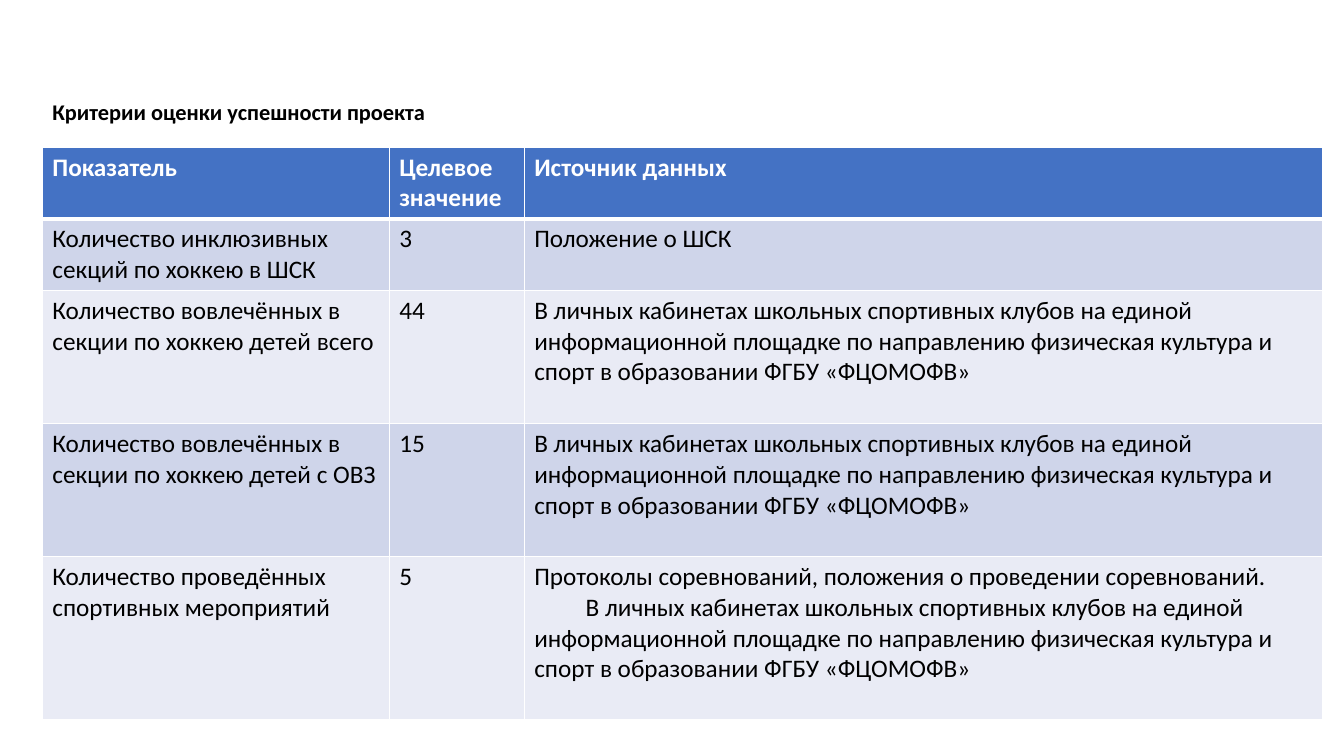
from dataclasses import dataclass

from lxml.etree import SubElement
from pptx import Presentation
from pptx.dml.color import RGBColor
from pptx.enum.text import MSO_ANCHOR, PP_ALIGN
from pptx.oxml import parse_xml
from pptx.oxml.ns import nsdecls
from pptx.slide import Slide
from pptx.table import _Cell
from pptx.text.text import _Paragraph
from pptx.util import Inches, Pt

FONT = "Calibri"
COLORS = {
    "text": "000000",
    "header_text": "FFFFFF",
    "header": "4472C4",
    "odd_row": "CFD5EA",
    "even_row": "E9EBF5",
    "border": "FFFFFF",
}
COLUMN_WIDTHS = (3.44, 1.34, 7.92)
SECOND_PARAGRAPH_INDENT = 0.51
CLUB_ACCOUNTS = (
    "В личных кабинетах школьных спортивных клубов на единой информационной "
    "площадке по направлению физическая культура и спорт в образовании "
    "ФГБУ «ФЦОМОФВ»"
)


@dataclass(frozen=True)
class Criterion:
    indicator: str
    target: str
    sources: tuple[str, ...]
    height: float


HEADING = Criterion("Показатель", "Целевое значение", ("Источник данных",), 0.7)
CRITERIA = (
    Criterion("Количество инклюзивных секций по хоккею в ШСК", "3",
              ("Положение о ШСК",), 0.71),
    Criterion("Количество вовлечённых в секции по хоккею детей всего", "44",
              (CLUB_ACCOUNTS,), 1.32),
    Criterion("Количество вовлечённых в секции по хоккею детей с ОВЗ", "15",
              (CLUB_ACCOUNTS,), 1.32),
    Criterion("Количество проведённых спортивных мероприятий", "5",
              ("Протоколы соревнований, положения о проведении соревнований.",
               CLUB_ACCOUNTS), 1.62),
)


def add_text(paragraph: _Paragraph, text: str, size: int, color: str, bold: bool) -> None:
    run = paragraph.add_run()
    run.text = text
    run.font.name = FONT
    run.font.size = Pt(size)
    run.font.bold = bold
    run.font.color.rgb = RGBColor.from_string(COLORS[color])


def set_borders(cell: _Cell, top: int, bottom: int) -> None:
    """Draw the four cell edges; widths are in points."""
    properties = cell._tc.get_or_add_tcPr()
    widths = {"lnL": 1, "lnR": 1, "lnT": top, "lnB": bottom}
    for position, (edge, width) in enumerate(widths.items()):
        line = parse_xml(f'<a:{edge} {nsdecls("a")} w="{Pt(width)}"><a:solidFill/></a:{edge}>')
        SubElement(line[0], f"{{{line.nsmap['a']}}}srgbClr", val=COLORS["border"])
        properties.insert(position, line)


def fill_cell(cell: _Cell, texts: tuple[str, ...], row: int) -> None:
    is_header = row == 0
    fill = "header" if is_header else "odd_row" if row % 2 else "even_row"
    cell.fill.solid()
    cell.fill.fore_color.rgb = RGBColor.from_string(COLORS[fill])
    set_borders(cell, top=3 if row == 1 else 1, bottom=3 if is_header else 1)
    for number, text in enumerate(texts):
        frame = cell.text_frame
        paragraph = frame.add_paragraph() if number else frame.paragraphs[0]
        if number:
            paragraph._p.get_or_add_pPr().set("indent", str(Inches(SECOND_PARAGRAPH_INDENT)))
        add_text(paragraph, text, 18, "header_text" if is_header else "text", is_header)


def add_title(slide: Slide, text: str) -> None:
    title = slide.shapes.title
    title.left, title.top = Inches(0.42), Inches(0.4)
    title.width, title.height = Inches(11.5), Inches(1.45)
    title.text_frame.vertical_anchor = MSO_ANCHOR.MIDDLE
    paragraph = title.text_frame.paragraphs[0]
    paragraph.alignment = PP_ALIGN.LEFT
    paragraph.line_spacing = 0.9
    add_text(paragraph, text, 16, "text", True)


def add_criteria_table(slide: Slide) -> None:
    rows = (HEADING, *CRITERIA)
    table = slide.shapes.add_table(
        len(rows), len(COLUMN_WIDTHS), Inches(0.42), Inches(1.46),
        Inches(sum(COLUMN_WIDTHS)), Inches(sum(row.height for row in rows)),
    ).table
    for column, width in zip(table.columns, COLUMN_WIDTHS):
        column.width = Inches(width)
    for index, criterion in enumerate(rows):
        table.rows[index].height = Inches(criterion.height)
        contents = ((criterion.indicator,), (criterion.target,), criterion.sources)
        for cell, texts in zip(table.rows[index].cells, contents):
            fill_cell(cell, texts, index)


def main() -> None:
    presentation = Presentation()
    presentation.slide_width = Inches(13.33)
    presentation.slide_height = Inches(7.5)
    slide = presentation.slides.add_slide(presentation.slide_layouts.get_by_name("Title Only"))
    add_title(slide, "Критерии оценки успешности проекта")
    add_criteria_table(slide)
    presentation.save("out.pptx")


if __name__ == "__main__":
    main()
